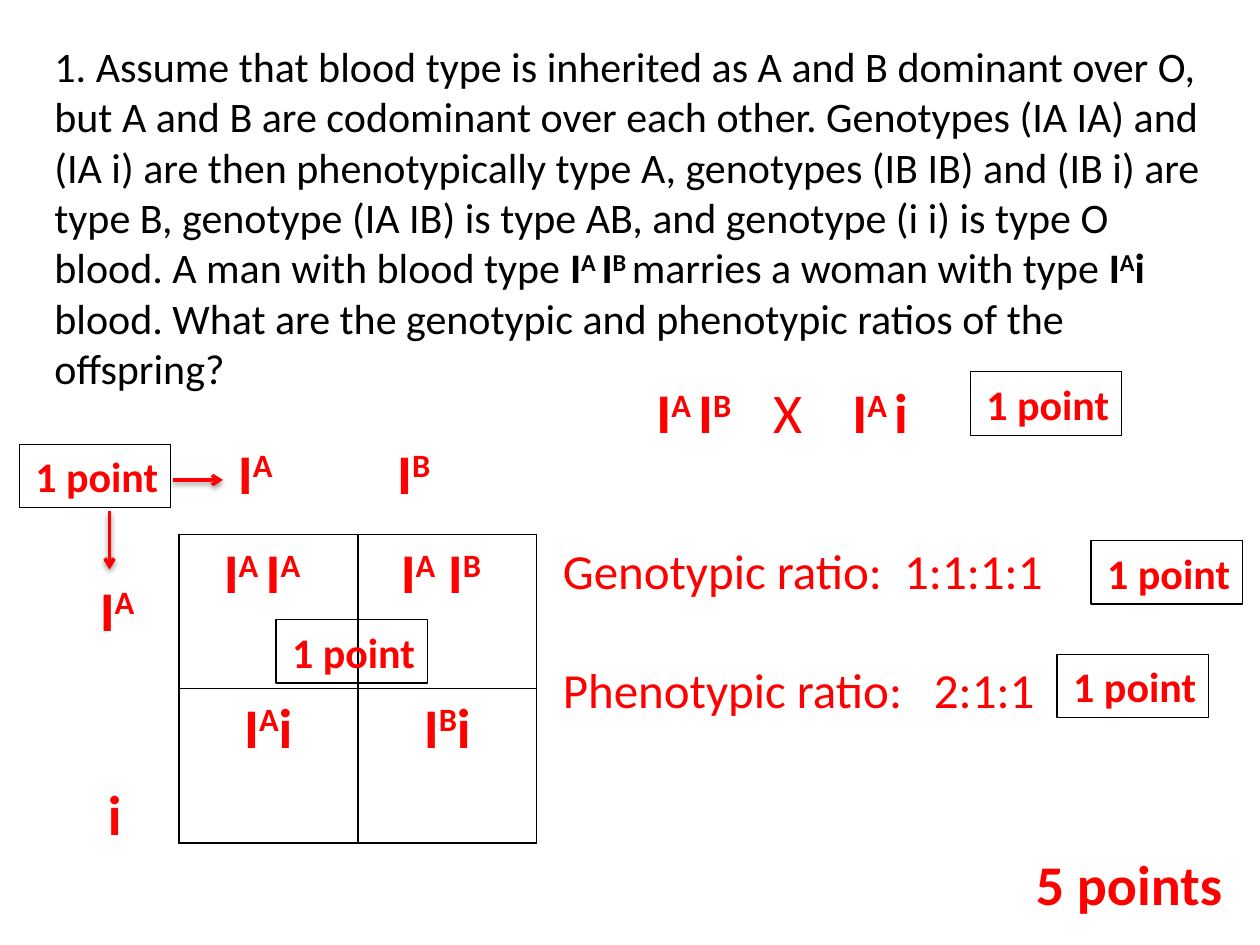
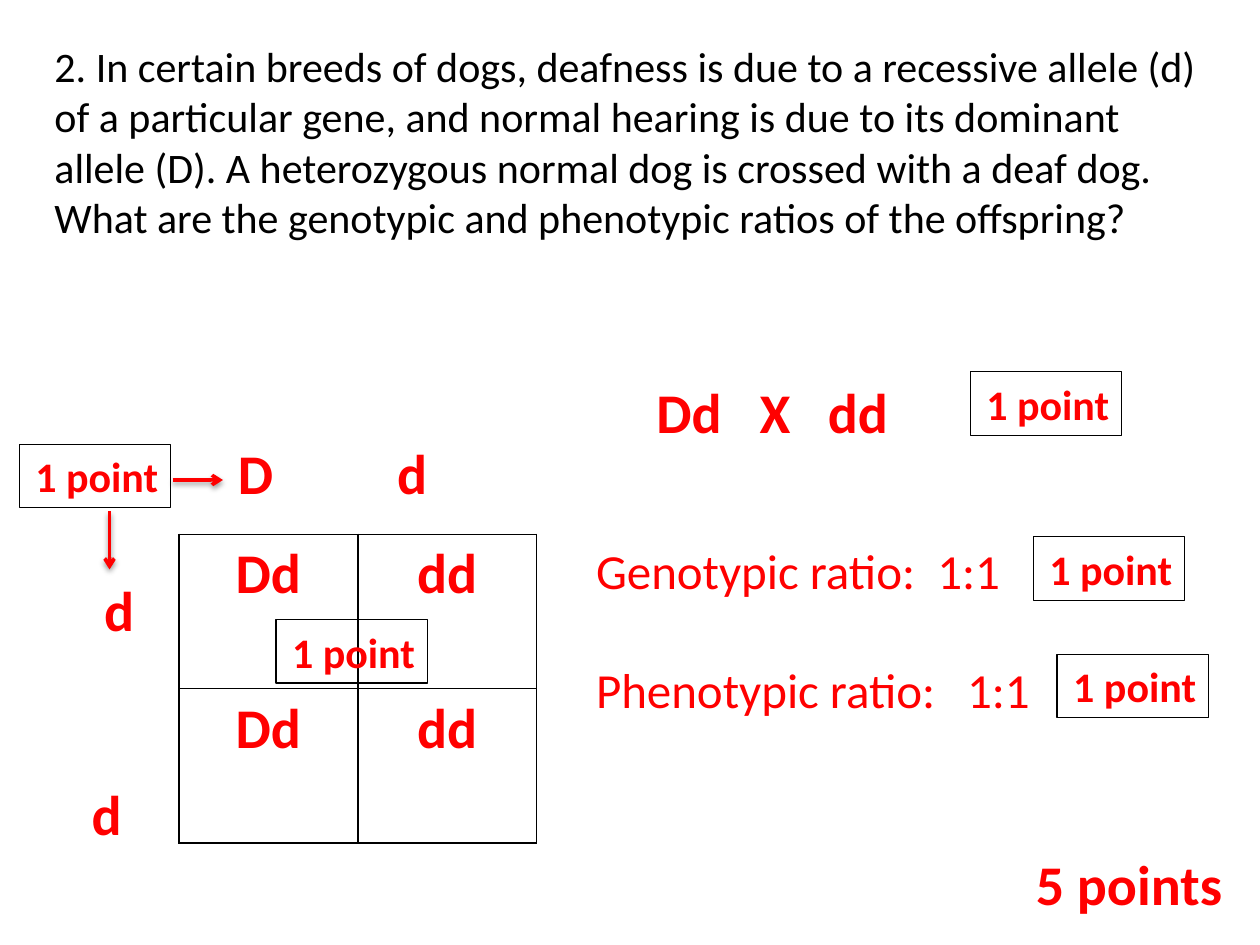
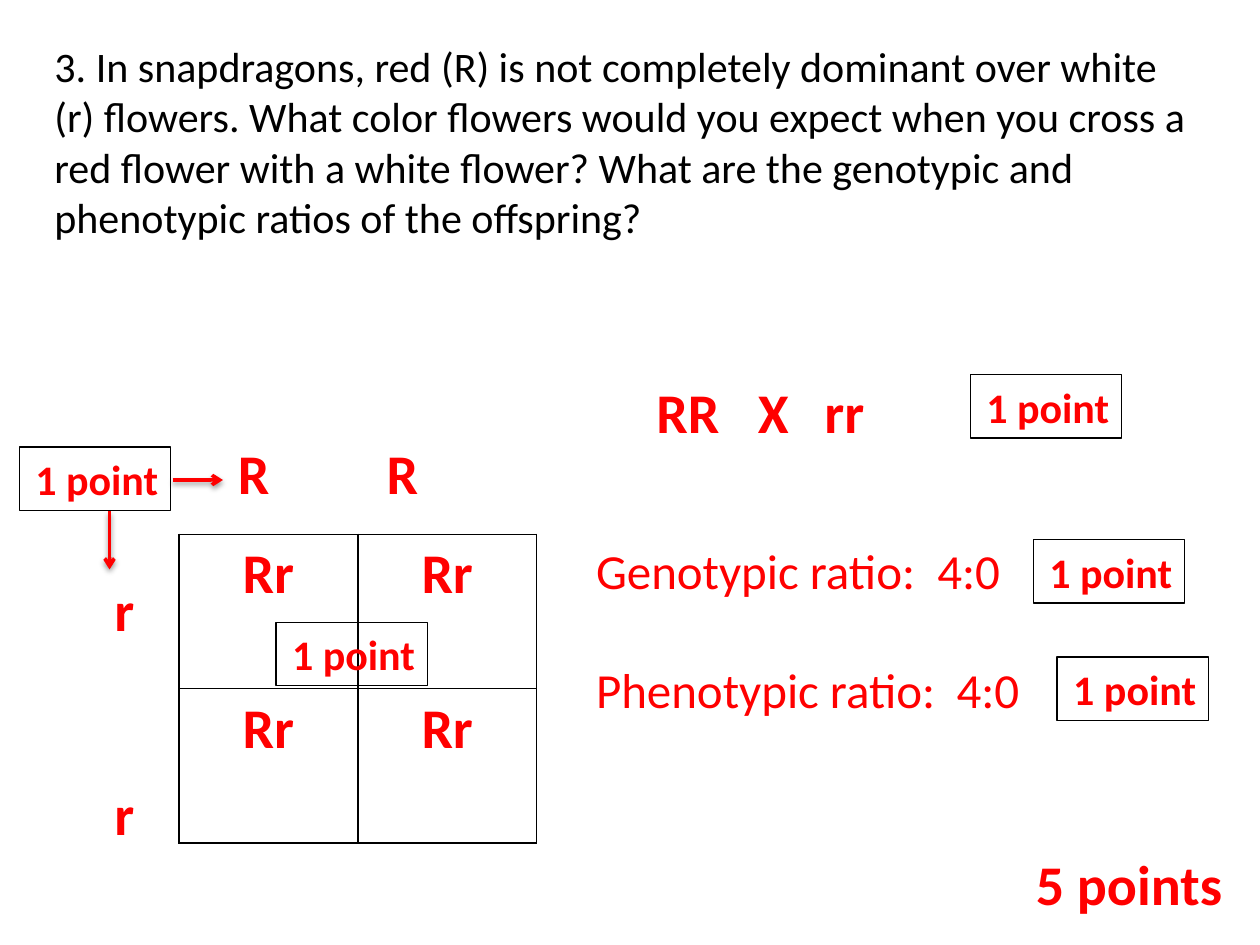
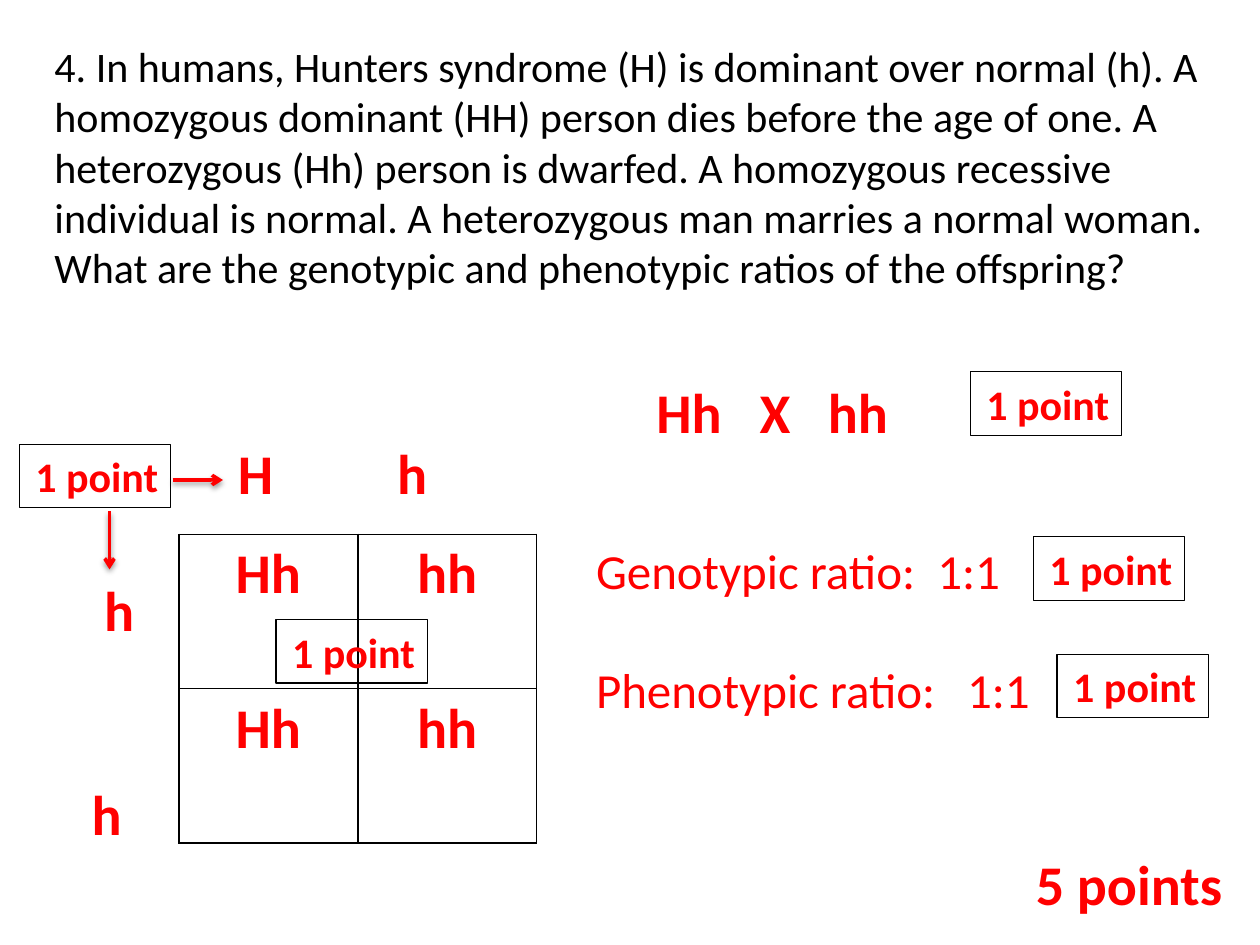
from dataclasses import dataclass

from lxml import etree
from pptx import Presentation
from pptx.dml.color import RGBColor
from pptx.enum.shapes import MSO_CONNECTOR, MSO_SHAPE
from pptx.enum.text import MSO_AUTO_SIZE, PP_ALIGN
from pptx.oxml.ns import qn
from pptx.util import Pt

LEFT, CENTER, RIGHT = PP_ALIGN.LEFT, PP_ALIGN.CENTER, PP_ALIGN.RIGHT
RECTANGLE = MSO_SHAPE.RECTANGLE
STRAIGHT = MSO_CONNECTOR.STRAIGHT
FIT_SHAPE = MSO_AUTO_SIZE.SHAPE_TO_FIT_TEXT
COLORS = {"question": "000000", "answer": "FF0000", "rule": "000000"}
FONT = "Calibri"
LINE_HEIGHT = 1.22
BADGE_SIZE = (86.5, 36.3)
GENOTYPE_TAB = 195


@dataclass
class Problem:
    question: str
    question_height: float
    cross: str
    cross_tabs: tuple
    top_alleles: str
    side_alleles: tuple
    square: tuple
    genotypic: str
    phenotypic: str
    top_tab: float = 91
    phenotype_tab: float = 212
    ratio_left: float = 333.5
    genotype_badge: tuple = (590.4, 306.7)
    badge_drop: float = 0


PROBLEMS = [
    Problem(
        "1. Assume that blood type is inherited as A and B dominant over O, but A and B are "
        "codominant over each other. Genotypes (IA IA) and (IA i) are then phenotypically type A, "
        "genotypes (IB IB) and (IB i) are type B, genotype (IA IB) is type AB, and genotype (i i) "
        "is type O blood. A man with blood type *I^A ^I^B *^marries a woman with type *I^A^i *"
        "blood. What are the genotypic and phenotypic ratios of the offspring?",
        245, "I^A ^I^B^\t*X*\tI^A ^i", (67, 112), "I^A^\tI^B^", ("I^A^", "i "),
        (("I^A ^I^A^ ", "I^A^ I^B^ "), ("I^A^i", "I^B^i")),
        "1:1:1:1", "2:1:1", ratio_left=314.6, genotype_badge=(623.5, 308.9)),
    Problem(
        "2. In certain breeds of dogs, deafness is due to a recessive allele (d) of a particular "
        "gene, and normal hearing is due to its dominant allele (D). A heterozygous normal dog is "
        "crossed with a deaf dog. What are the genotypic and phenotypic ratios of the offspring?",
        158, "Dd\tX\tdd", (59, 98), "D\td", ("d", "d "),
        (("Dd", "dd"), ("Dd", "dd")), "1:1", "1:1"),
    Problem(
        "3. In snapdragons, red (R) is not completely dominant over white (r) flowers. What color "
        "flowers would you expect when you cross a red flower with a white flower? What are the "
        "genotypic and phenotypic ratios of the offspring?",
        158, "RR\tX\trr", (58, 96), "R\tR", ("r", "r"),
        (("Rr", "Rr"), ("Rr", "Rr")), "4:0", "4:0",
        top_tab=85, phenotype_tab=206, badge_drop=1.6),
    Problem(
        "4. In humans, Hunters syndrome (H) is dominant over normal (h). A homozygous dominant "
        "(HH) person dies before the age of one. A heterozygous (Hh) person is dwarfed. A "
        "homozygous recessive individual is normal. A heterozygous man marries a normal woman. "
        "What are the genotypic and phenotypic ratios of the offspring?",
        187, "Hh\tX\thh", (59, 98), "H\th", ("h", "h "),
        (("Hh", "hh"), ("Hh", "hh")), "1:1", "1:1"),
]


def add_runs(paragraph, marked, size, color, bold):
    for weight, stretch in enumerate(marked.replace("*^", "^*").split("*")):
        for level, text in enumerate(stretch.split("^")):
            if not text:
                continue
            run = paragraph.add_run()
            run.text = text
            run.font.name = FONT
            run.font.size = Pt(size)
            run.font.bold = bold != bool(weight % 2)
            run.font.color.rgb = RGBColor.from_string(COLORS[color])
            if level % 2:
                run.font._element.set("baseline", "30000")


def write_text(frame, *lines, size=32, color="answer", bold=True, align=LEFT, gap_lines=0, tabs=()):
    frame.word_wrap = True
    for index, line in enumerate(lines):
        paragraph = frame.paragraphs[0] if index == 0 else frame.add_paragraph()
        paragraph.alignment = align
        if index:
            paragraph.space_before = Pt(round(gap_lines * size * LINE_HEIGHT, 2))
        stops = tabs[index] if tabs else ()
        if stops:
            tab_list = etree.SubElement(paragraph._p.get_or_add_pPr(), qn("a:tabLst"))
            for stop in stops:
                etree.SubElement(tab_list, qn("a:tab"), pos=str(Pt(stop)), algn="l")
        add_runs(paragraph, line, size, color, bold)


def add_text(slide, box, *lines, **text_format):
    frame = slide.shapes.add_textbox(*map(Pt, box)).text_frame
    write_text(frame, *lines, **text_format)
    frame.auto_size = FIT_SHAPE


def add_badge(slide, left, top):
    badge = slide.shapes.add_shape(RECTANGLE, Pt(left), Pt(top), *map(Pt, BADGE_SIZE))
    badge.shadow.inherit = False
    badge.fill.background()
    badge.line.color.rgb = RGBColor.from_string(COLORS["rule"])
    badge.line.width = Pt(0.75)
    write_text(badge.text_frame, "1 point", size=24, align=RIGHT)
    badge.text_frame.auto_size = FIT_SHAPE


def add_arrow(slide, *ends):
    arrow = slide.shapes.add_connector(STRAIGHT, *map(Pt, ends))
    arrow.line.color.rgb = RGBColor.from_string(COLORS["answer"])
    arrow.line.width = Pt(2)
    properties = arrow._element.spPr
    etree.SubElement(properties.find(qn("a:ln")), qn("a:tailEnd"), type="arrow")
    effects = etree.SubElement(properties, qn("a:effectLst"))
    shadow = etree.SubElement(effects, qn("a:outerShdw"), blurRad=str(Pt(3.1)),
                              dist=str(Pt(1.6)), dir="5400000", rotWithShape="0")
    shade = etree.SubElement(shadow, qn("a:srgbClr"), val=COLORS["rule"])
    etree.SubElement(shade, qn("a:alpha"), val="38000")


def add_borders(cell):
    properties = cell._tc.get_or_add_tcPr()
    for index, side in enumerate(("lnL", "lnR", "lnT", "lnB")):
        border = etree.Element(qn(f"a:{side}"), w=str(Pt(1)))
        fill = etree.SubElement(border, qn("a:solidFill"))
        etree.SubElement(fill, qn("a:srgbClr"), val=COLORS["rule"])
        properties.insert(index, border)


def add_punnett_square(slide, genotypes):
    square = slide.shapes.add_table(2, 2, Pt(102.2), Pt(305.3), Pt(204.5), Pt(176.4)).table
    square.first_row = square.horz_banding = False
    for row, pair in enumerate(genotypes):
        for column, genotype in enumerate(pair):
            cell = square.cell(row, column)
            cell.fill.background()
            add_borders(cell)
            write_text(cell.text_frame, genotype, align=CENTER)


def add_problem(slide, problem):
    add_text(slide, (24, 19.5, 671, problem.question_height), problem.question,
             size=24, color="question", bold=False)
    add_text(slide, (567.4, 481.7, 138.2, 46), "5 points", align=RIGHT)
    add_punnett_square(slide, problem.square)
    add_text(slide, (368, 212.4, 255.6, 46), problem.cross, tabs=[problem.cross_tabs])
    add_text(slide, (128.9, 247, 177.8, 46), problem.top_alleles, tabs=[(problem.top_tab,)])
    add_text(slide, (24, 325.4, 59.8, 136.8), *problem.side_alleles, align=RIGHT, gap_lines=2)
    add_text(slide, (problem.ratio_left, 305.3, 361.4, 108.7),
             f"Genotypic ratio:\t{problem.genotypic}", f"Phenotypic ratio:\t{problem.phenotypic}",
             size=28, bold=False, gap_lines=1, tabs=[(GENOTYPE_TAB,), (problem.phenotype_tab,)])
    badges = [(554.4, 212.4), (11, 253.9), (604.1, 373.9), problem.genotype_badge, (157.7, 354)]
    for left, top in badges:
        add_badge(slide, left, top + problem.badge_drop)
    add_arrow(slide, 98.6, 274.3, 127.4, 274.3)
    add_arrow(slide, 62.6, 292.3, 62.6, 325.4)


def main():
    deck = Presentation()
    deck.slide_width, deck.slide_height = Pt(720), Pt(540)
    for problem in PROBLEMS:
        add_problem(deck.slides.add_slide(deck.slide_layouts[6]), problem)
    deck.save("out.pptx")


if __name__ == "__main__":
    main()
